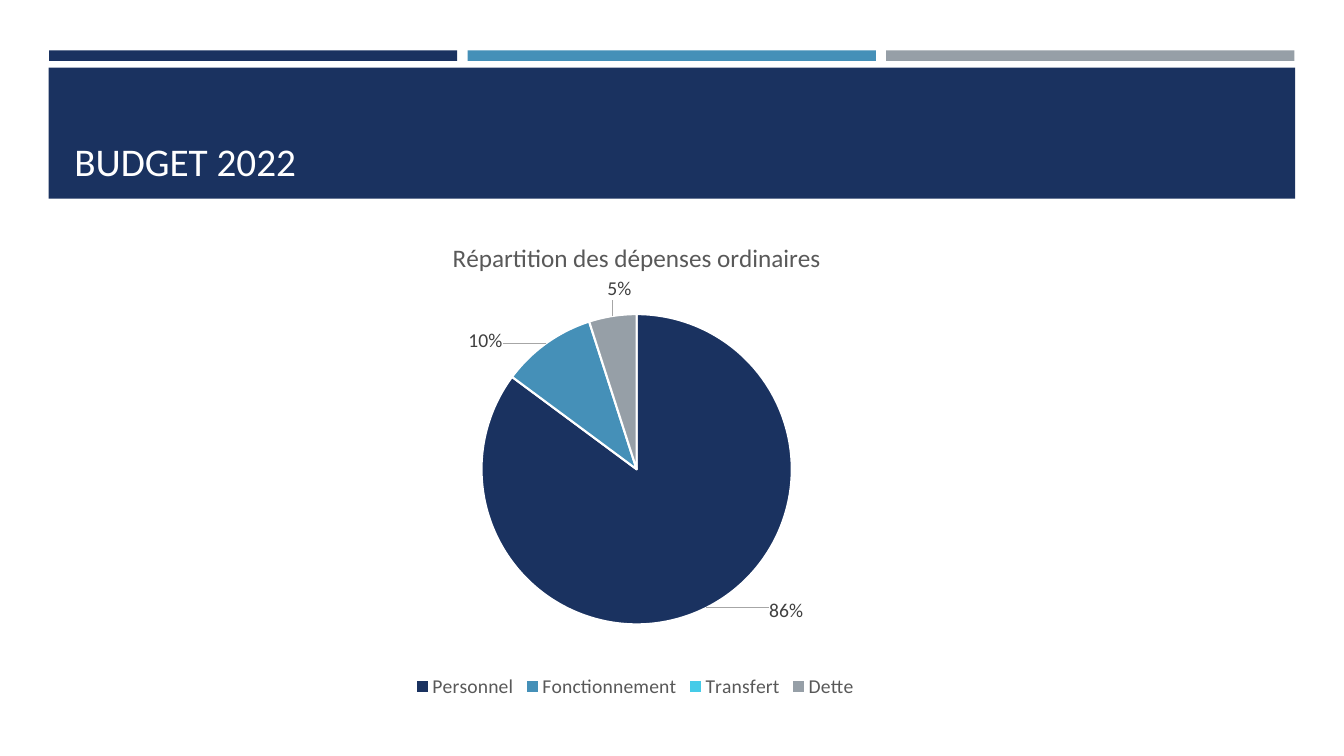
from lxml import etree
from pptx import Presentation
from pptx.chart.data import CategoryChartData
from pptx.dml.color import RGBColor
from pptx.enum.chart import XL_CHART_TYPE, XL_LABEL_POSITION, XL_LEGEND_POSITION
from pptx.enum.shapes import MSO_SHAPE
from pptx.enum.text import MSO_ANCHOR
from pptx.oxml import parse_xml
from pptx.oxml.ns import nsdecls, qn
from pptx.util import Pt

RECTANGLE = MSO_SHAPE.RECTANGLE
PIE = XL_CHART_TYPE.PIE
OUTSIDE_END = XL_LABEL_POSITION.OUTSIDE_END
BOTTOM = XL_LEGEND_POSITION.BOTTOM
ANCHOR_BOTTOM = MSO_ANCHOR.BOTTOM

NAVY = RGBColor(0x1A, 0x32, 0x60)
BLUE = RGBColor(0x45, 0x90, 0xB8)
CYAN = RGBColor(0x45, 0xCB, 0xE8)
GREY = RGBColor(0x96, 0x9F, 0xA7)
WHITE = RGBColor(0xFF, 0xFF, 0xFF)
TEXT_GREY = RGBColor(0x59, 0x59, 0x59)
LABEL_GREY = RGBColor(0x40, 0x40, 0x40)

FONT = "Calibri"
PERCENT_FORMAT = '0"%"'

# Category, share in percent, colour, label offset as a fraction of the chart
EXPENSES = [
    ("Personnel", 86, NAVY, (0.09, -0.03)),
    ("Fonctionnement", 10, BLUE, (-0.06, 0.03)),
    ("Transfert", 0, CYAN, (-0.02, -0.02)),
    ("Dette", 5, GREY, (0.03, -0.02)),
]


def format_font(font, size, color):
    font.name = FONT
    font.size = Pt(size)
    font.bold = False
    font.color.rgb = color


def add_bar(slide, left, top, width, height, color):
    bar = slide.shapes.add_shape(RECTANGLE, Pt(left), Pt(top), Pt(width), Pt(height))
    bar.shadow.inherit = False
    bar.fill.solid()
    bar.fill.fore_color.rgb = color
    bar.line.fill.background()


def add_text(slide, text, *, left, top, width, height, size, color, anchor):
    box = slide.shapes.add_textbox(Pt(left), Pt(top), Pt(width), Pt(height))
    frame = box.text_frame
    frame.word_wrap = True
    frame.vertical_anchor = anchor
    run = frame.paragraphs[0].add_run()
    run.text = text
    format_font(run.font, size, color)


def manual_layout(target=None, **fractions):
    """Return a c:layout element; fractions are x, y, w and h of the chart."""
    layout = parse_xml(f"<c:layout {nsdecls('c')}><c:manualLayout/></c:layout>")
    manual = layout[0]
    if target:
        etree.SubElement(manual, qn("c:layoutTarget"), val=target)
    if target or "w" not in fractions:
        for mode in ("c:xMode", "c:yMode"):
            etree.SubElement(manual, qn(mode), val="edge")
    for name, value in fractions.items():
        etree.SubElement(manual, qn(f"c:{name}"), val=str(value))
    return layout


def label_offset(x, y):
    """Return a c:layout that moves a label from its default place."""
    layout = manual_layout(x=x, y=y)
    for mode in ("c:xMode", "c:yMode"):
        layout[0].remove(layout[0].find(qn(mode)))
    return layout


def format_slice(point, color, offset):
    point.format.fill.solid()
    point.format.fill.fore_color.rgb = color
    point.format.line.color.rgb = WHITE
    point.format.line.width = Pt(1.5)
    label = point.data_label
    format_font(label.font, 14, LABEL_GREY)
    label.position = OUTSIDE_END


def place_labels(labels_element):
    """Give each label its offset and number format, and show leader lines."""
    label_elements = labels_element.findall(qn("c:dLbl"))
    for element, (_, _, _, offset) in zip(label_elements, EXPENSES):
        layout = label_offset(*offset)
        element.find(qn("c:idx")).addnext(layout)
        number_format = etree.Element(
            qn("c:numFmt"), formatCode=PERCENT_FORMAT, sourceLinked="0")
        layout.addnext(number_format)
    for old in labels_element.findall(qn("c:showLeaderLines")):
        labels_element.remove(old)
    etree.SubElement(labels_element, qn("c:showLeaderLines"), val="1")
    labels_element.append(parse_xml(
        f'<c:leaderLines {nsdecls("c", "a")}><c:spPr><a:ln w="9525"><a:solidFill>'
        '<a:srgbClr val="A6A6A6"/></a:solidFill></a:ln></c:spPr></c:leaderLines>'))


def format_title(chart, text):
    chart.has_title = True
    title = chart.chart_title
    title.include_in_layout = False
    run = title.text_frame.paragraphs[0].add_run()
    run.text = text
    format_font(run.font, 18, TEXT_GREY)
    element = chart._chartSpace.chart.find(qn("c:title"))
    for old in element.findall(qn("c:layout")):
        element.remove(old)
    element.find(qn("c:tx")).addnext(manual_layout(x=0.22, y=0.04))


def format_legend(chart):
    chart.has_legend = True
    chart.legend.position = BOTTOM
    chart.legend.include_in_layout = False
    format_font(chart.legend.font, 14, TEXT_GREY)


def add_expense_pie(slide, left, top, width, height):
    data = CategoryChartData()
    data.categories = [name for name, *_ in EXPENSES]
    data.add_series("Dépenses", [share for _, share, *_ in EXPENSES])
    chart = slide.shapes.add_chart(
        PIE, Pt(left), Pt(top), Pt(width), Pt(height), data).chart
    chart.font.name = FONT
    chart.font.size = Pt(10)
    format_title(chart, "Répartition des dépenses ordinaires")
    format_legend(chart)

    plot = chart.plots[0]
    plot.vary_by_categories = True
    series = plot.series[0]
    labels = series.data_labels
    labels.show_value = True
    labels.number_format = PERCENT_FORMAT
    labels.number_format_is_linked = False
    labels.position = OUTSIDE_END
    format_font(labels.font, 14, LABEL_GREY)
    for index, (_, _, color, offset) in enumerate(EXPENSES):
        format_slice(series.points[index], color, offset)
    place_labels(series._element.find(qn("c:dLbls")))

    plot_area = chart._chartSpace.chart.plotArea
    for old in plot_area.findall(qn("c:layout")):
        plot_area.remove(old)
    plot_area.insert(0, manual_layout("inner", x=0.27, y=0.2, w=0.465, h=0.64))


def main():
    presentation = Presentation()
    presentation.slide_width = Pt(960)
    presentation.slide_height = Pt(540)
    slide = presentation.slides.add_slide(presentation.slide_layouts[6])

    for index, color in enumerate((NAVY, BLUE, GREY)):
        add_bar(slide, 35 + 299 * index, 36, 291.6, 7.5, color)
    add_bar(slide, 34.8, 48.4, 890.4, 93.6, NAVY)
    add_text(slide, "BUDGET 2022", left=46, top=55.4, width=868, height=80,
             size=28, color=WHITE, anchor=ANCHOR_BOTTOM)
    add_expense_pie(slide, 215.3, 154.8, 476.6, 347)
    presentation.save("out.pptx")


if __name__ == "__main__":
    main()
